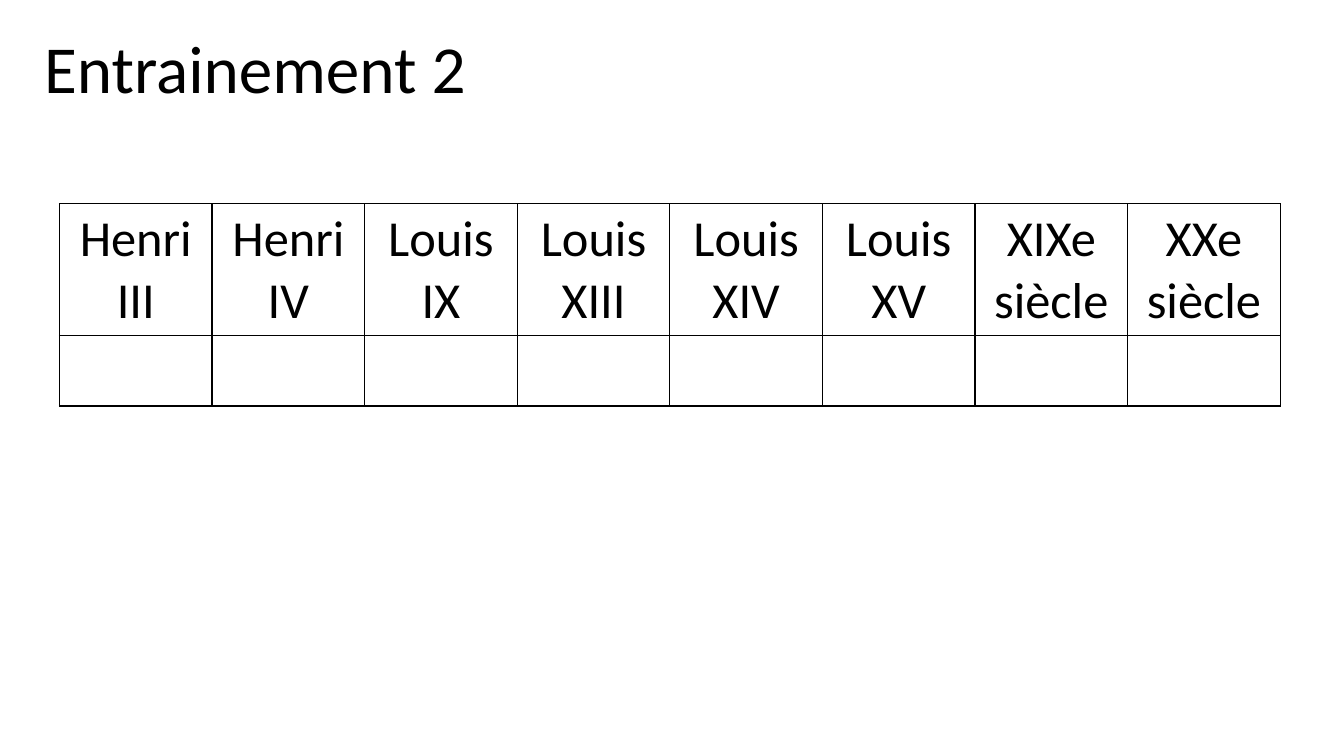
from lxml import etree
from pptx import Presentation
from pptx.dml.color import RGBColor
from pptx.enum.text import PP_ALIGN
from pptx.oxml.ns import qn
from pptx.util import Pt

CENTER = PP_ALIGN.CENTER
BLANK_LAYOUT = 6
COLORS = {"text": "000000", "border": "000000"}
HEADINGS = [
    "Henri III", "Henri IV", "Louis IX", "Louis XIII",
    "Louis XIV", "Louis XV", "XIXe siècle", "XXe siècle",
]


class SlideBuilder:
    font = "Calibri"
    border_width = 1

    def __init__(self, slide):
        self.slide = slide

    def format_paragraph(self, para, size):
        for span in para.runs:
            span.font.name = self.font
            span.font.size = Pt(size)
            span.font.color.rgb = RGBColor.from_string(COLORS["text"])

    def text(self, content, left, top, width, height, size):
        box = self.slide.shapes.add_textbox(Pt(left), Pt(top), Pt(width), Pt(height))
        box.text_frame.word_wrap = True
        box.text_frame.text = content
        self.format_paragraph(box.text_frame.paragraphs[0], size)

    def border(self, cell):
        properties = cell._tc.get_or_add_tcPr()
        for side in ("a:lnL", "a:lnR", "a:lnT", "a:lnB"):
            line = etree.SubElement(properties, qn(side), w=str(Pt(self.border_width)))
            fill = etree.SubElement(line, qn("a:solidFill"))
            etree.SubElement(fill, qn("a:srgbClr"), val=COLORS["border"])

    def table(self, rows, left, top, column_width, row_heights, size):
        column_count = len(rows[0])
        table = self.slide.shapes.add_table(
            len(rows), column_count, Pt(left), Pt(top),
            Pt(column_width * column_count), Pt(sum(row_heights)),
        ).table
        table.first_row = table.horz_banding = False
        for column in table.columns:
            column.width = Pt(column_width)
        for row, height, contents in zip(table.rows, row_heights, rows):
            row.height = Pt(height)
            for cell, content in zip(row.cells, contents):
                cell.text_frame.text = content
                para = cell.text_frame.paragraphs[0]
                para.alignment = CENTER
                self.format_paragraph(para, size)
                self.border(cell)
                cell.fill.background()


def main():
    deck = Presentation()
    deck.slide_width, deck.slide_height = Pt(960), Pt(540)
    page = SlideBuilder(deck.slides.add_slide(deck.slide_layouts[BLANK_LAYOUT]))
    page.text("Entrainement 2", 24.5, 15, 913, 65, size=48)
    page.table(
        [HEADINGS, [""] * len(HEADINGS)],
        left=42.5, top=145.5, column_width=109, row_heights=[94, 50.5], size=36,
    )
    deck.save("out.pptx")


if __name__ == "__main__":
    main()
